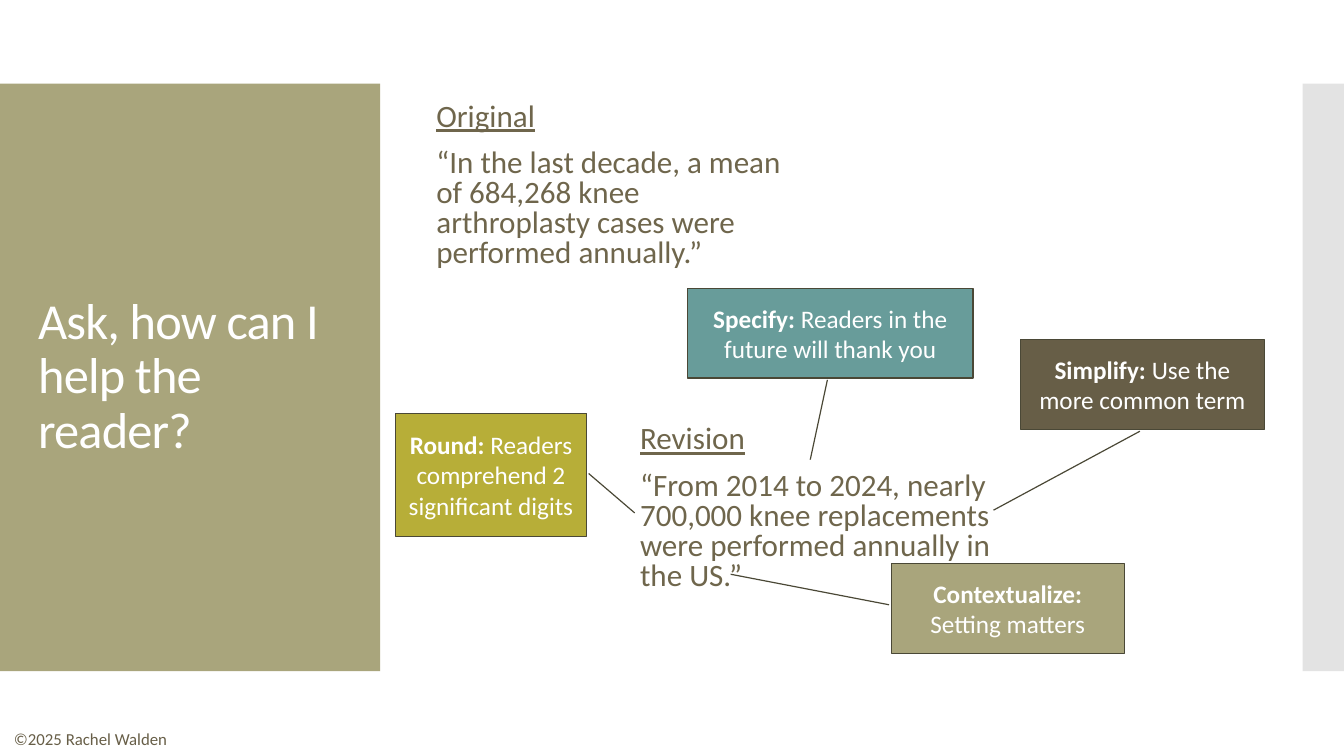
from lxml import etree
from pptx import Presentation
from pptx.dml.color import RGBColor
from pptx.enum.shapes import MSO_SHAPE
from pptx.enum.text import MSO_ANCHOR, PP_ALIGN
from pptx.oxml.ns import qn
from pptx.util import Inches, Pt

FONT = "Calibri"
WHITE, KHAKI, BROWN, BODY = "FFFFFF", "A9A57C", "675E47", "6F664C"
OUTLINE = "4A4836"
BAND_TOP, BAND_HEIGHT = 0.83, 5.83

# left, top, width, height, fill, label, text, pointer as (y1, x1, y2, x2) shares of the box
CALLOUTS = [
    (6.82, 2.86, 2.83, 0.89, "689C9A", "Specify: ",
     "Readers in the future will thank you", (1.02, 0.49, 1.91, 0.43)),
    (3.92, 4.1, 1.9, 1.22, "B7AE38", "Round: ",
     "Readers comprehend 2 significant digits", (0.49, 1.01, 0.81, 1.25)),
    (10.12, 3.37, 2.42, 0.89, BROWN, "Simplify: ",
     "Use the more common term", (1.02, 0.49, 1.9, -0.11)),
    (8.84, 5.59, 2.31, 0.89, KHAKI, "Contextualize: ",
     "Setting matters", (0.46, -0.01, 0.12, -0.69)),
]


def rgb(color):
    return RGBColor.from_string(color)


def add_run(p, text, size, color, bold=False, underline=False):
    r = p.add_run()
    r.text = text
    font = r.font
    font.name, font.size, font.bold, font.underline = FONT, Pt(size), bold, underline
    font.color.rgb = rgb(color)
    return r


def add_filled(s, kind, box, fill):
    sp = s.shapes.add_shape(kind, *map(Inches, box))
    sp.shadow.inherit = False
    sp.fill.solid()
    sp.fill.fore_color.rgb = rgb(fill)
    return sp


def add_band(s, left, width, fill, opacity=None):
    box = left, BAND_TOP, width, BAND_HEIGHT
    sp = add_filled(s, MSO_SHAPE.RECTANGLE, box, fill)
    sp.line.fill.background()
    if opacity is not None:
        color = sp.fill._xPr.find(qn("a:solidFill")).find(qn("a:srgbClr"))
        etree.SubElement(color, qn("a:alpha")).set("val", str(opacity * 1000))


def add_text_frame(s, box, anchor=MSO_ANCHOR.MIDDLE):
    tf = s.shapes.add_textbox(*map(Inches, box)).text_frame
    tf.word_wrap = True
    tf.vertical_anchor = anchor
    return tf


def add_title(s, box, text):
    p = add_text_frame(s, box).paragraphs[0]
    p.line_spacing = 0.9
    r = add_run(p, text, 36, WHITE)
    r.font._element.set("spc", "-60")


def add_passage(s, box, heading, quote):
    """Underlined heading with a quoted sentence below it."""
    tf = add_text_frame(s, box)
    for p, text in ((tf.paragraphs[0], heading), (tf.add_paragraph(), quote)):
        p.line_spacing = 0.8
        p.space_before = Pt(12)
        add_run(p, text, 22.2, BODY, underline=text == heading)


def add_callout(s, left, top, width, height, fill, label, text, pointer):
    box = left, top, width, height
    sp = add_filled(s, MSO_SHAPE.LINE_CALLOUT_1, box, fill)
    sp.line.color.rgb = rgb(OUTLINE)
    sp.line.width = Pt(0.85)
    for i, share in enumerate(pointer):
        sp.adjustments[i] = share
    tf = sp.text_frame
    tf.word_wrap = True
    tf.vertical_anchor = MSO_ANCHOR.MIDDLE
    p = tf.paragraphs[0]
    p.alignment = PP_ALIGN.CENTER
    add_run(p, label, 18, WHITE, bold=True)
    add_run(p, text, 18, WHITE)


def main():
    prs = Presentation()
    prs.slide_width, prs.slide_height = Inches(13.33), Inches(7.5)
    s = prs.slides.add_slide(prs.slide_layouts[6])

    add_band(s, 0, 3.77, KHAKI)
    add_band(s, 12.92, 0.41, "C8C8C8", opacity=50)
    add_title(s, (0.28, 1.23, 3.22, 5.03), "Ask, how can I help the reader?")
    add_passage(s, (4.23, 0.95, 3.8, 1.8), "Original",
                "“In the last decade, a mean of 684,268 knee arthroplasty "
                "cases were performed annually.”")
    add_passage(s, (6.25, 3.95, 3.99, 2.2), "Revision",
                "“From 2014 to 2024, nearly 700,000 knee replacements "
                "were performed annually in the US.”")
    for callout in CALLOUTS:
        add_callout(s, *callout)

    credit = add_text_frame(s, (0.04, 7.18, 1.72, 0.3), MSO_ANCHOR.TOP)
    add_run(credit.paragraphs[0], "©2025 Rachel Walden", 12, BROWN)
    prs.save("out.pptx")


if __name__ == "__main__":
    main()
